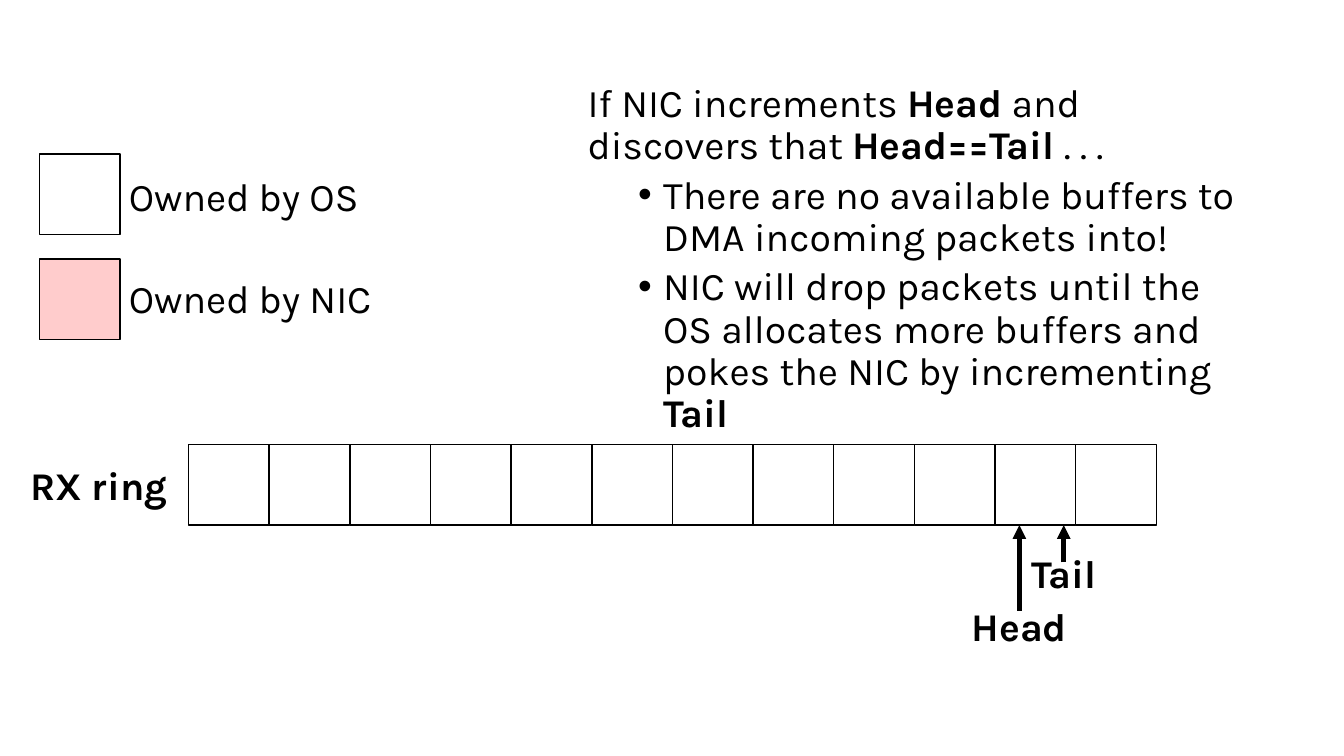
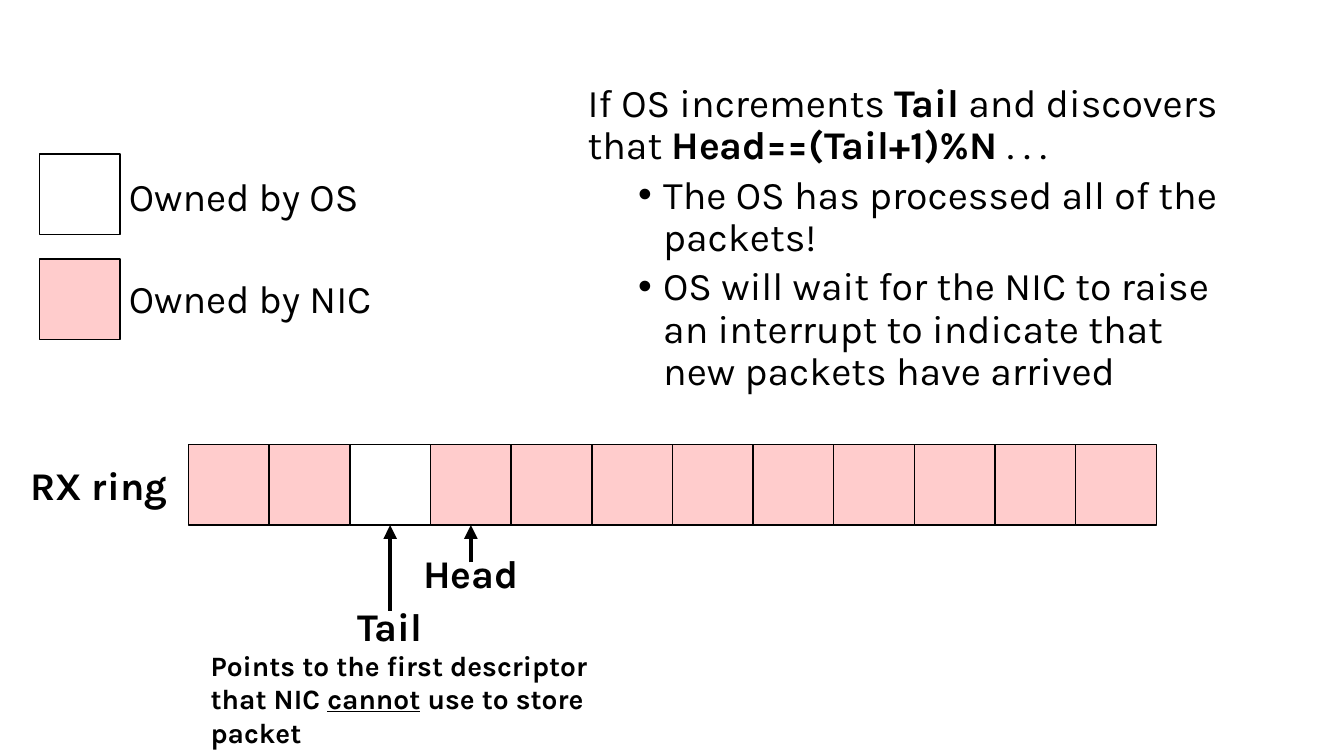
from lxml.etree import SubElement
from pptx import Presentation
from pptx.dml.color import RGBColor
from pptx.enum.shapes import MSO_CONNECTOR, MSO_SHAPE
from pptx.enum.text import MSO_AUTO_SIZE, PP_ALIGN
from pptx.oxml.ns import qn
from pptx.util import Pt

PX = 9144  # EMU in one px, 100 px to the inch
FONT = "Karla"
COLOURS = {"ink": "000000", "os": "FFFFFF", "nic": "FFCCCC"}
CELL = 80
RING_LEFT, RING_TOP, RING_CELLS = 187, 441, 12
RING_BOTTOM = RING_TOP + CELL
LABEL_WIDTH, LABEL_HEIGHT = 134, 57
LEGEND = [("Owned by OS", "os", 153, 166), ("Owned by NIC", "nic", 257, 267)]

# Each span is (text, style): b is bold, u is underlined.
# Each pointer is (name, x, label top, arrow start, ring cell to join or None).
SLIDES = [
    {
        "owners": ["os"] * RING_CELLS,
        "body": [
            [("If NIC increments ", ""), ("Head", "b"), (" and discovers that ", ""),
             ("Head==Tail", "b"), (" . . .", "")],
            [("There are no available buffers to DMA incoming packets into!", "")],
            [("NIC will drop packets until the OS allocates more buffers and pokes "
              "the NIC by incrementing ", ""), ("Tail", "b")],
        ],
        "pointers": [("Head", 1011, 593, 606, None), ("Tail", 1055, 540, 558, None)],
        "note": [],
    },
    {
        "owners": ["nic"] * 2 + ["os"] + ["nic"] * 9,
        "body": [
            [("If OS increments ", ""), ("Tail", "b"), (" and discovers that ", ""),
             ("Head==(Tail+1)%N", "b"), (" . . .", "")],
            [("The OS has processed all of the packets!", "")],
            [("OS will wait for the NIC to raise an interrupt to indicate that new "
              "packets have arrived", "")],
        ],
        "pointers": [("Head", 467, 540, 558, 3), ("Tail", 387, 593, 606, 2)],
        "note": [("Points to the first descriptor that NIC ", "b"), ("cannot", "bu"),
                 (" use to store packet", "b")],
    },
]


def add_text(page, left, top, width, height, paragraphs, size=28, align=PP_ALIGN.LEFT):
    box = page.shapes.add_textbox(left * PX, top * PX, width * PX, height * PX)
    frame = box.text_frame
    frame.word_wrap = True
    frame.auto_size = MSO_AUTO_SIZE.NONE
    for index, spans in enumerate(paragraphs):
        para = frame.add_paragraph() if index else frame.paragraphs[0]
        para.alignment = align
        for text, style in spans:
            span = para.add_run()
            span.text = text
            span.font.name = FONT
            span.font.size = Pt(size)
            span.font.bold = "b" in style
            span.font.underline = "u" in style
            span.font.color.rgb = RGBColor.from_string(COLOURS["ink"])
    return frame


def add_cell(page, left, top, owner):
    cell = page.shapes.add_shape(MSO_SHAPE.RECTANGLE, left * PX, top * PX, CELL * PX, CELL * PX)
    cell.shadow.inherit = False
    cell.fill.solid()
    cell.fill.fore_color.rgb = RGBColor.from_string(COLOURS[owner])
    cell.line.color.rgb = RGBColor.from_string(COLOURS["ink"])
    cell.line.width = Pt(1)
    return cell


deck = Presentation()
deck.slide_width = 1333 * PX
deck.slide_height = 750 * PX

for content in SLIDES:
    page = deck.slides.add_slide(deck.slide_layouts[6])

    # Ring of descriptors
    ring = [add_cell(page, RING_LEFT + index * CELL, RING_TOP, owner)
            for index, owner in enumerate(content["owners"])]
    add_text(page, 10, 453, 176, LABEL_HEIGHT, [[("RX ring", "b")]], align=PP_ALIGN.CENTER)

    # Explanation: a lead sentence, then bullets
    body = add_text(page, 573, 78, 667, 346, content["body"])
    for index, para in enumerate(body.paragraphs):
        para.line_spacing = 0.9
        para.space_before = Pt(5 if index else 10)
        if index:
            para.level = 1
            properties = para._p.get_or_add_pPr()
            properties.set("marL", str(75 * PX))
            properties.set("indent", str(-25 * PX))
            SubElement(properties, qn("a:buFont"), typeface="Arial")
            SubElement(properties, qn("a:buChar"), char="•")

    # Head and tail pointers
    for name, x, label_top, start, target in content["pointers"]:
        add_text(page, x - LABEL_WIDTH // 2, label_top, LABEL_WIDTH, LABEL_HEIGHT,
                 [[(name, "b")]], align=PP_ALIGN.CENTER)
        arrow = page.shapes.add_connector(
            MSO_CONNECTOR.STRAIGHT, x * PX, start * PX, x * PX, RING_BOTTOM * PX)
        if target is not None:
            arrow.end_connect(ring[target], 2)
        arrow.line.color.rgb = RGBColor.from_string(COLOURS["ink"])
        arrow.line.width = Pt(3.25)
        SubElement(arrow.line._get_or_add_ln(), qn("a:tailEnd"), type="triangle")
        SubElement(arrow._element.spPr, qn("a:effectLst"))

    # Note under the pointers
    if content["note"]:
        add_text(page, 199, 638, 401, 77, [content["note"]], size=20)

    # Legend
    for caption, owner, cell_top, caption_top in LEGEND:
        add_cell(page, 39, cell_top, owner)
        add_text(page, 118, caption_top, 268, LABEL_HEIGHT, [[(caption, "")]])

deck.save("out.pptx")
